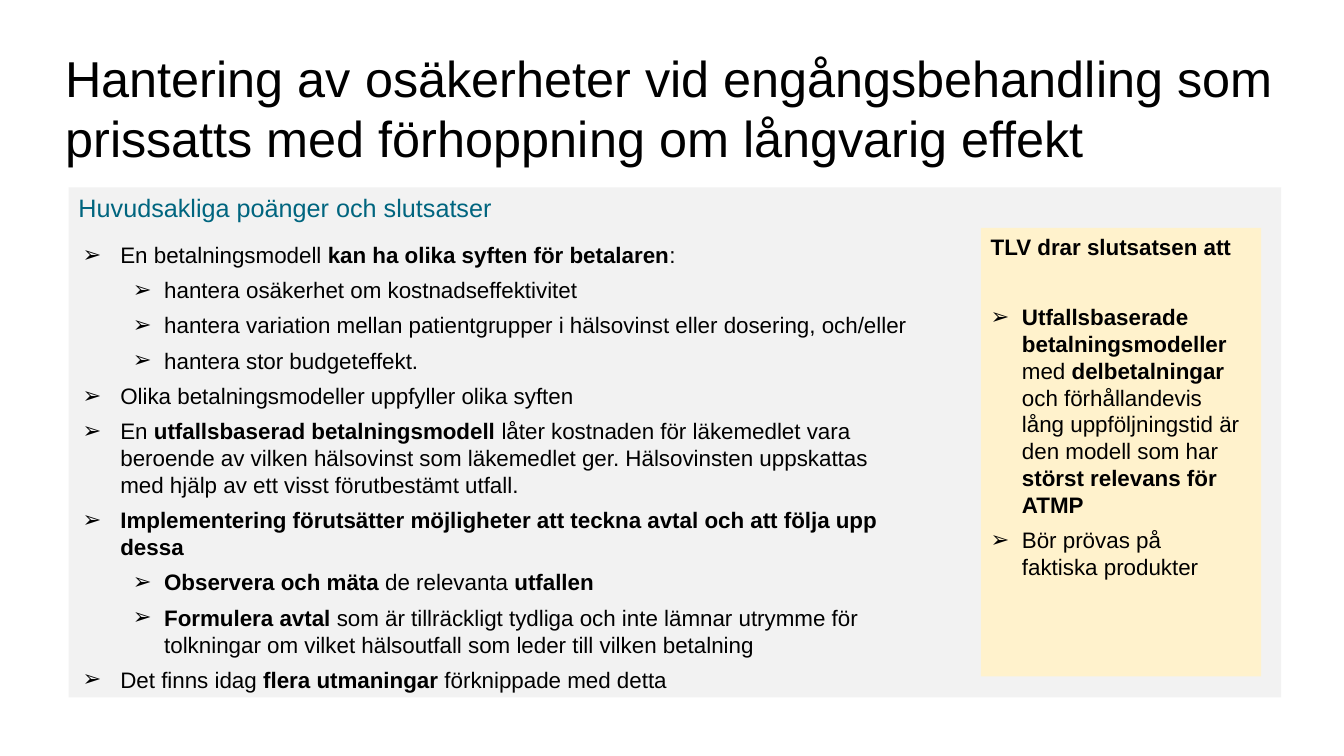
"""Build a slide on handling uncertainty in one-time treatments."""
import pptx
import pptx.dml.color
import pptx.enum.shapes
import pptx.enum.text
import pptx.oxml.ns
import pptx.util
import lxml.etree

Pt = pptx.util.Pt
TITLE = "Hantering av osäkerheter vid engångsbehandling som prissatts med förhoppning om långvarig effekt"
HEAD = "Huvudsakliga poänger och slutsatser"
POINTS = [
    ("main", "En betalningsmodell **kan ha olika syften för betalaren**:"),
    ("sub", "hantera osäkerhet om kostnadseffektivitet"),
    ("sub", "hantera variation mellan patientgrupper i hälsovinst eller dosering, och/eller"),
    ("sub", "hantera stor budgeteffekt."),
    ("main", "Olika betalningsmodeller uppfyller olika syften"),
    ("main", "En **utfallsbaserad betalningsmodell **låter kostnaden för läkemedlet vara beroende av vilken "
             "hälsovinst som läkemedlet ger. Hälsovinsten uppskattas med hjälp av ett visst förutbestämt utfall."),
    ("main", "**Implementering förutsätter möjligheter att teckna avtal och att följa upp dessa**"),
    ("sub", "**Observera och mäta **de relevanta **utfallen**"),
    ("sub", "**Formulera avtal **som är tillräckligt tydliga och inte lämnar utrymme för tolkningar "
            "om vilket hälsoutfall som leder till vilken betalning"),
    ("main", "Det finns idag **flera utmaningar **förknippade med detta"),
]
VERDICT = [
    ("lead", "**TLV drar slutsatsen att**"),
    ("side", "**Utfallsbaserade betalningsmodeller** med **delbetalningar **och förhållandevis lång "
             "uppföljningstid är den modell som har **störst relevans för ATMP**"),
    ("side", "Bör prövas på faktiska produkter"),
]
THEME = {
    "font": "Arial", "ink": "000000", "teal": "00657F", "grey": "F2F2F2", "cream": "FFF2CC",
    "title": 36, "head": 18, "body": 16,
}
STYLES = {
    "plain": dict(level=0, left=0, hang=0, after=0),
    "lead": dict(level=0, left=0, hang=0, after=31),
    "main": dict(level=0, left=27, hang=27, after=6),
    "sub": dict(level=1, left=58.3, hang=22.3, after=6),
    "side": dict(level=0, left=22.3, hang=22.3, after=6),
}


def color(name):
    return pptx.dml.color.RGBColor.from_string(THEME[name])


def bullet(para, left, hang):
    props = para._p.get_or_add_pPr()
    props.set("marL", str(int(Pt(left))))
    props.set("indent", str(-int(Pt(hang))))
    qn = pptx.oxml.ns.qn
    tint = lxml.etree.SubElement(props, qn("a:buClr"))
    lxml.etree.SubElement(tint, qn("a:srgbClr"), val=THEME["ink"])
    lxml.etree.SubElement(props, qn("a:buFont"), typeface=THEME["font"])
    lxml.etree.SubElement(props, qn("a:buChar"), char="➢")


def write(shape, rows, size="body", ink="ink", inset=None, anchor="TOP"):
    frame = shape.text_frame
    frame.word_wrap = True
    frame.vertical_anchor = getattr(pptx.enum.text.MSO_ANCHOR, anchor)
    if inset is not None:
        for side in ("left", "top", "right", "bottom"):
            setattr(frame, "margin_" + side, Pt(inset))
    for index, (kind, text) in enumerate(rows):
        para = frame.add_paragraph() if index else frame.paragraphs[0]
        style = STYLES[kind]
        para.level = style["level"]
        para.alignment = pptx.enum.text.PP_ALIGN.LEFT
        para.space_after = Pt(style["after"])
        if style["hang"]:
            bullet(para, style["left"], style["hang"])
        for place, part in enumerate(text.split("**")):
            if part:
                run = para.add_run()
                run.text = part
                run.font.name = THEME["font"]
                run.font.size = Pt(THEME[size])
                run.font.bold = place % 2 == 1
                run.font.color.rgb = color(ink)


def panel(slide, fill, *box):
    kind = pptx.enum.shapes.MSO_SHAPE.RECTANGLE
    shape = slide.shapes.add_shape(kind, *map(Pt, box))
    shape.shadow.inherit = False
    shape.fill.solid()
    shape.fill.fore_color.rgb = color(fill)
    shape.line.fill.background()
    return shape


def label(slide, *box):
    return slide.shapes.add_textbox(*map(Pt, box))


def main():
    deck = pptx.Presentation()
    deck.slide_width, deck.slide_height = Pt(960), Pt(540)
    slide = deck.slides.add_slide(deck.slide_layouts[6])
    wide, left, top = 866.2, 700.6, 162.7
    board = panel(slide, "grey", 49, 133.9, wide, 364.3)
    write(board, [("plain", HEAD)], size="head", ink="teal")
    panel(slide, "cream", left, top, 200.2, 320.4)
    title = label(slide, 46.8, 47.5, wide, 58.3)
    write(title, [("plain", TITLE)], size="title", inset=0, anchor="MIDDLE")
    write(label(slide, 59, 172.1, 592.6, 354.2), POINTS, inset=0)
    write(label(slide, left, top, 192.2, 308.9), VERDICT)
    deck.save("out.pptx")


if __name__ == "__main__":
    main()
